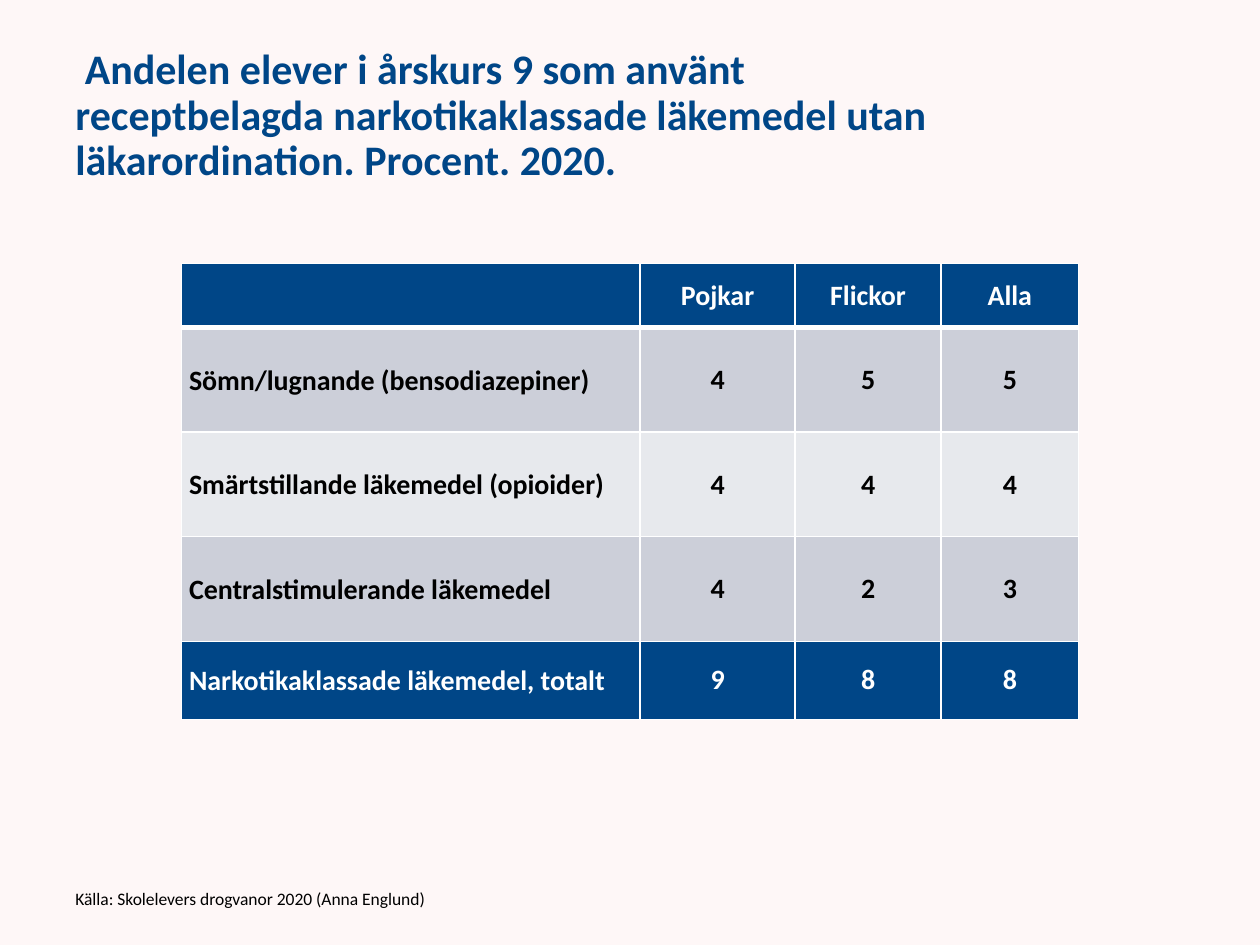
import lxml.etree
import pptx
import pptx.dml.color
import pptx.enum.text
import pptx.oxml.ns
import pptx.util

THEME = {
    "font": "Calibri",
    "background": "FEF7F7",
    "blue": "004687",
    "white": "FFFFFF",
    "black": "000000",
    "odd": "CCCFD9",
    "even": "E7E9ED",
    "title_size": 24,
    "table_size": 16,
    "source_size": 10,
}
ALIGN = pptx.enum.text.PP_ALIGN
MIDDLE = pptx.enum.text.MSO_ANCHOR.MIDDLE
rgb = pptx.dml.color.RGBColor.from_string
qn = pptx.oxml.ns.qn


def write(frame, text, size, color, bold=True, align=ALIGN.LEFT, spacing=1.0):
    frame.word_wrap = True
    paragraph = frame.paragraphs[0]
    paragraph.text = text
    paragraph.alignment = align
    paragraph.line_spacing = spacing
    font = paragraph.font
    font.name = THEME["font"]
    font.size = pptx.util.Pt(size)
    font.bold = bold
    font.color.rgb = rgb(THEME[color])


def add_border(cell, side, points):
    line = lxml.etree.SubElement(
        cell._tc.get_or_add_tcPr(), qn(f"a:ln{side}"), w=str(pptx.util.Pt(points))
    )
    solid = lxml.etree.SubElement(line, qn("a:solidFill"))
    lxml.etree.SubElement(solid, qn("a:srgbClr"), val=THEME["white"])


deck = pptx.Presentation()
deck.slide_width = pptx.util.Inches(10)
deck.slide_height = pptx.util.Inches(7.5)
column = deck.slide_width / 100
row = deck.slide_height / 75

slide = deck.slides.add_slide(deck.slide_layouts[6])
slide.background.fill.solid()
slide.background.fill.fore_color.rgb = rgb(THEME["background"])

title = slide.shapes.add_textbox(
    int(5 * column), int(3 * row), int(90 * column), int(12.5 * row)
).text_frame
title.vertical_anchor = MIDDLE
write(
    title,
    " Andelen elever i årskurs 9 som använt\vreceptbelagda narkotikaklassade "
    "läkemedel utan läkarordination. Procent. 2020.",
    size=THEME["title_size"],
    color="blue",
    spacing=0.9,
)

shares = [
    ("", "Pojkar", "Flickor", "Alla"),
    ("Sömn/lugnande (bensodiazepiner)", "4", "5", "5"),
    ("Smärtstillande läkemedel (opioider)", "4", "4", "4"),
    ("Centralstimulerande läkemedel", "4", "2", "3"),
    ("Narkotikaklassade läkemedel, totalt", "9", "8", "8"),
]
row_styles = [
    ("blue", "white"),
    ("odd", "black"),
    ("even", "black"),
    ("odd", "black"),
    ("blue", "white"),
]
widths = [36.4, 12.3, 11.6, 10.9]
heights = [5.1, 8.3, 8.3, 8.3, 6.2]

usage = slide.shapes.add_table(
    len(heights),
    len(widths),
    int(14.4 * column),
    int(20.9 * row),
    int(sum(widths) * column),
    int(sum(heights) * row),
).table
for group, width in zip(usage.columns, widths):
    group.width = int(width * column)
for drug, height in zip(usage.rows, heights):
    drug.height = int(height * row)

for r, (entries, (fill, ink)) in enumerate(zip(shares, row_styles)):
    for c, entry in enumerate(entries):
        cell = usage.cell(r, c)
        for side in "LRTB":
            under_header = (r, side) in [(0, "B"), (1, "T")]
            add_border(cell, side, 3 if under_header else 1)
        cell.fill.solid()
        cell.fill.fore_color.rgb = rgb(THEME[fill])
        cell.vertical_anchor = MIDDLE
        if r == 0 or c == 0:
            cell.margin_left = int((0.6 if c == 0 else 0.1) * column)
            cell.margin_right = int(0.1 * column)
            cell.margin_top = int(0.1 * row)
            cell.margin_bottom = 0
        write(
            cell.text_frame,
            entry,
            size=THEME["table_size"],
            color=ink,
            align=ALIGN.CENTER if c else ALIGN.LEFT,
        )

source = slide.shapes.add_textbox(
    int(5 * column), int(69.6 * row), int(45 * column), int(3.7 * row)
).text_frame
source.vertical_anchor = MIDDLE
write(
    source,
    "Källa: Skolelevers drogvanor 2020 (Anna Englund)",
    size=THEME["source_size"],
    color="black",
    bold=False,
    spacing=0.9,
)

deck.save("out.pptx")
